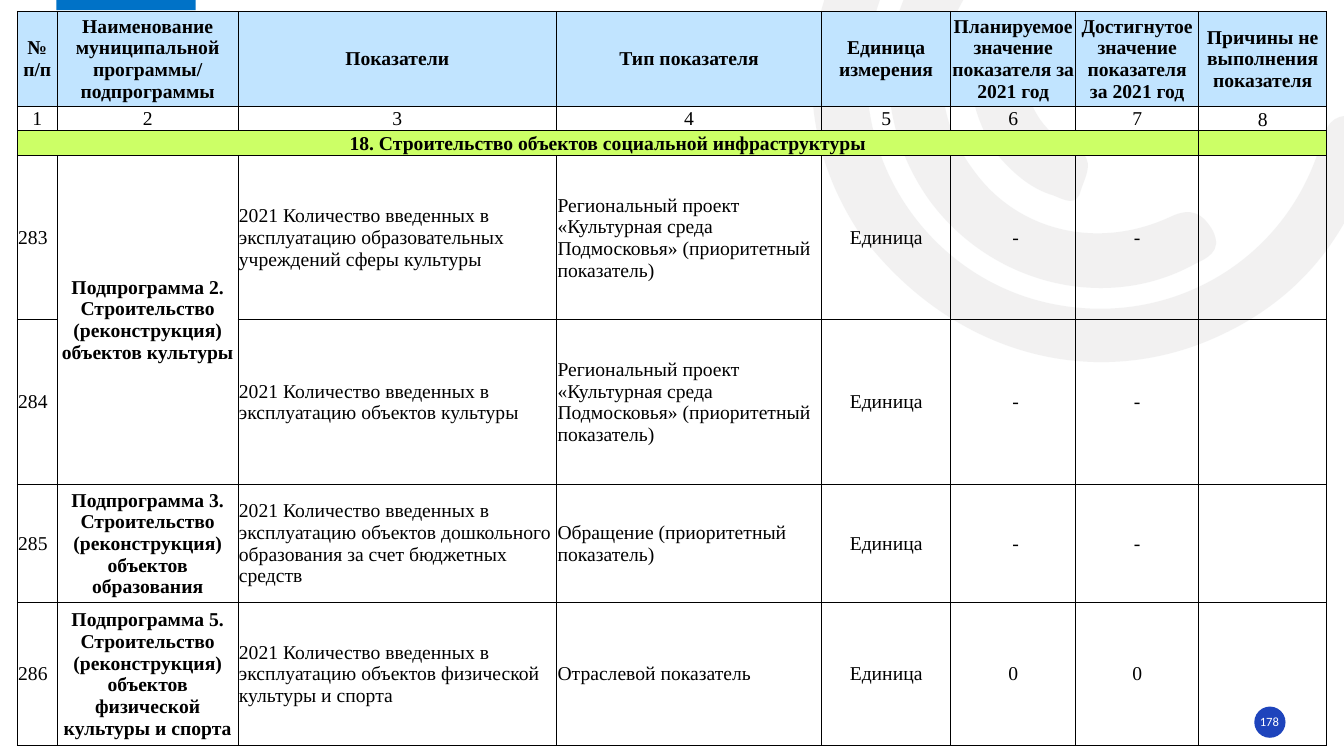
from dataclasses import dataclass
from typing import Any, Optional

from lxml.etree import SubElement
from pptx import Presentation
from pptx.dml.color import RGBColor
from pptx.enum.shapes import MSO_SHAPE
from pptx.enum.text import MSO_ANCHOR, PP_ALIGN
from pptx.oxml.ns import qn
from pptx.util import Inches, Pt

# The slide is a grid of one-inch modules; all lengths count modules.
MODULE = Inches(1)
GRID_COLUMNS, GRID_ROWS = 13.33, 7.5

COLORS = {
    "arc": "E7E6E6", "tab": "0072C7", "badge": "1E44BC", "header": "C1E4FF",
    "section": "CCFF66", "border": "000000", "ink": "000000", "paper": "FFFFFF",
}
ARC_OPACITY = 53
BODY_FONT = {"name": "Times New Roman", "size": Pt(14)}
NUMBER_FONT = {"name": "Calibri", "size": Pt(9)}
PLAIN_TABLE_STYLE = "{2D5ABB26-0587-4C30-8999-92F81FD0307C}"

Point = tuple[float, float]
Curve = tuple[float, float, float, float, float, float]


@dataclass(frozen=True)
class Arc:
    start: Point
    curves: tuple[Curve, ...]


@dataclass(frozen=True)
class Block:
    kind: MSO_SHAPE
    left: float
    top: float
    width: float
    height: float
    color: str


@dataclass(frozen=True)
class CellLook:
    fill: Optional[str] = None
    bold: bool = False
    align: PP_ALIGN = PP_ALIGN.CENTER
    anchor: MSO_ANCHOR = MSO_ANCHOR.MIDDLE


ARCS = (
    Arc((8.51, 2.29), (
        (7.99, 1.49, 7.87, 0.5, 8.38, -0.5), (8.9, -1.52, 9.76, -2.03, 10.9, -2.07),
        (11.05, -2.07, 11.21, -2.1, 11.31, -1.95), (11.44, -1.75, 11.27, -1.54, 10.98, -1.54),
        (9.67, -1.54, 8.65, -0.59, 8.6, 0.68), (8.56, 1.81, 9.36, 2.81, 10.46, 3.02),
        (11.6, 3.24, 12.7, 2.61, 13.07, 1.52), (13.09, 1.48, 13.11, 1.44, 13.12, 1.4),
        (13.16, 1.19, 13.27, 1.11, 13.49, 1.17), (13.73, 1.24, 13.67, 1.41, 13.61, 1.56),
        (13.34, 2.45, 12.78, 3.07, 11.91, 3.41), (10.7, 3.87, 9.36, 3.45, 8.51, 2.29))),
    Arc((9.22, 1.99), (
        (8.62, 1.15, 8.69, 0.07, 9.4, -0.68), (9.51, -0.79, 9.62, -0.95, 9.8, -0.78),
        (9.95, -0.64, 9.97, -0.5, 9.79, -0.32), (9.25, 0.26, 9.2, 1.08, 9.65, 1.68),
        (10.08, 2.29, 10.88, 2.49, 11.61, 2.15), (11.82, 2.05, 11.93, 2.12, 12.03, 2.29),
        (12.13, 2.5, 11.97, 2.56, 11.83, 2.63), (10.96, 3.1, 9.83, 2.82, 9.22, 1.99))),
    Arc((9.87, 1.51), (
        (9.75, 1.3, 9.64, 1.07, 9.64, 0.82), (9.64, 0.73, 9.61, 0.57, 9.76, 0.58),
        (9.92, 0.59, 10.13, 0.53, 10.16, 0.76), (10.21, 1.1, 10.36, 1.32, 10.67, 1.48),
        (10.88, 1.57, 10.76, 1.76, 10.72, 1.89), (10.68, 2.06, 10.55, 1.98, 10.45, 1.94),
        (10.21, 1.87, 10.03, 1.7, 9.87, 1.51))),
)
BLOCKS = (
    Block(MSO_SHAPE.RECTANGLE, 0.56, -0.02, 1.38, 0.12, "tab"),
    Block(MSO_SHAPE.OVAL, 12.44, 7.01, 0.31, 0.31, "badge"),
)

TABLE_LEFT, TABLE_TOP = 0.17, 0.11
COLUMN_WIDTHS = (0.4, 1.79, 3.16, 2.63, 1.28, 1.24, 1.22, 1.27)
ROW_HEIGHTS = (0.89, 0.23, 0.23, 1.63, 1.63, 1.02, 1.23)
HEADER_ROW, NUMBERING_ROW, SECTION_ROW = range(3)
PROGRAM_COLUMN, REASON_COLUMN = 1, 7
LEFT_COLUMNS = (0, 2, 3)
MERGES = (((2, 0), (2, 6)), ((3, 1), (4, 1)))

CULTURE_PROJECT = "Региональный проект «Культурная среда Подмосковья» (приоритетный показатель)"
UNIT = "Единица"
INDICATORS = (
    ("№ п/п", "Наименование муниципальной программы/ подпрограммы", "Показатели",
     "Тип показателя", "Единица измерения", "Планируемое значение показателя за 2021 год",
     "Достигнутое значение показателя за 2021 год", "Причины не выполнения показателя"),
    tuple(str(number) for number in range(1, 9)),
    ("18. Строительство объектов социальной инфраструктуры",),
    ("283", "Подпрограмма 2. Строительство (реконструкция) объектов культуры",
     "2021 Количество введенных в эксплуатацию образовательных учреждений сферы культуры",
     CULTURE_PROJECT, UNIT, " -", "-"),
    ("284", "", "2021 Количество введенных в эксплуатацию объектов культуры",
     CULTURE_PROJECT, UNIT, " -", "-"),
    ("285", "Подпрограмма 3. Строительство (реконструкция) объектов образования",
     "2021 Количество введенных в эксплуатацию объектов дошкольного образования "
     "за счет бюджетных средств",
     "Обращение (приоритетный показатель)", UNIT, " -", "-"),
    ("286", "Подпрограмма 5. Строительство (реконструкция) объектов физической культуры и спорта",
     "2021 Количество введенных в эксплуатацию объектов физической культуры и спорта",
     "Отраслевой показатель", UNIT, "0", "0"),
)


def span(modules: float) -> int:
    return round(modules * MODULE)


def rgb(color: str) -> RGBColor:
    return RGBColor.from_string(COLORS[color])


def apply_format(target: Any, values: dict[str, Any]) -> None:
    for attribute, value in values.items():
        setattr(target, attribute, value)


def paint(shape: Any, color: str) -> None:
    shape.fill.solid()
    shape.fill.fore_color.rgb = rgb(color)
    shape.line.fill.background()
    shape.shadow.inherit = False


def draw_arc(shapes: Any, arc: Arc) -> None:
    """Lay the control points as corners, then join each three into a Bézier curve."""
    builder = shapes.build_freeform(*map(span, arc.start))
    for curve in arc.curves:
        corners = [(span(x), span(y)) for x, y in zip(curve[::2], curve[1::2])]
        builder.add_line_segments(corners, close=False)
    builder.add_line_segments([], close=True)
    outline = builder.convert_to_shape()
    paint(outline, "arc")
    SubElement(next(outline.element.iter(qn("a:srgbClr"))), qn("a:alpha"),
               val=str(ARC_OPACITY * 1000))
    lines = list(outline.element.iter(qn("a:lnTo")))
    for first in range(0, len(lines), 3):
        bezier = lines[first].makeelement(qn("a:cubicBezTo"))
        lines[first].addprevious(bezier)
        for line in lines[first:first + 3]:
            bezier.append(line[0])
            line.getparent().remove(line)


def draw_block(shapes: Any, block: Block) -> None:
    lengths = map(span, (block.left, block.top, block.width, block.height))
    paint(shapes.add_shape(block.kind, *lengths), block.color)


def write(paragraph: Any, wording: str, font: dict[str, Any], color: str) -> None:
    run = paragraph.add_run()
    run.text = wording
    apply_format(run.font, font)
    run.font.color.rgb = rgb(color)


def draw_page_number(shapes: Any) -> None:
    frame = shapes.add_textbox(*map(span, (12.43, 7.06, 0.32, 0.2))).text_frame
    apply_format(frame, {"margin_left": 0, "margin_right": 0, "margin_top": 0,
                         "margin_bottom": 0, "word_wrap": True,
                         "vertical_anchor": MSO_ANCHOR.MIDDLE})
    frame.paragraphs[0].alignment = PP_ALIGN.CENTER
    write(frame.paragraphs[0], "178", NUMBER_FONT, "paper")


def look_of(row: int, column: int) -> CellLook:
    if row == HEADER_ROW:
        return CellLook("header", bold=True)
    if row == NUMBERING_ROW:
        return CellLook(anchor=MSO_ANCHOR.BOTTOM if column == REASON_COLUMN else MSO_ANCHOR.MIDDLE)
    if row == SECTION_ROW:
        return CellLook("section", bold=True)
    return CellLook(bold=column == PROGRAM_COLUMN,
                    align=PP_ALIGN.LEFT if column in LEFT_COLUMNS else PP_ALIGN.CENTER)


def fill_cell(cell: Any, wording: str, look: CellLook) -> None:
    apply_format(cell, {"margin_left": span(0.01), "margin_right": span(0.01),
                        "margin_top": span(0.01), "margin_bottom": 0,
                        "vertical_anchor": look.anchor})
    properties = cell._tc.get_or_add_tcPr()
    for side in ("a:lnL", "a:lnR", "a:lnT", "a:lnB"):
        border = SubElement(properties, qn(side), w=str(Pt(0.5)))
        SubElement(SubElement(border, qn("a:solidFill")), qn("a:srgbClr"), val=COLORS["border"])
    if look.fill:
        cell.fill.solid()
        cell.fill.fore_color.rgb = rgb(look.fill)
    else:
        cell.fill.background()
    paragraph = cell.text_frame.paragraphs[0]
    paragraph.alignment = look.align
    if wording:
        write(paragraph, wording, BODY_FONT | {"bold": look.bold}, "ink")
    ending = SubElement(paragraph._p, qn("a:endParaRPr"), sz=str(int(BODY_FONT["size"].pt * 100)))
    SubElement(ending, qn("a:latin"), typeface=BODY_FONT["name"])


def draw_indicators(shapes: Any) -> None:
    table = shapes.add_table(
        len(ROW_HEIGHTS), len(COLUMN_WIDTHS), span(TABLE_LEFT), span(TABLE_TOP),
        span(sum(COLUMN_WIDTHS)), span(sum(ROW_HEIGHTS))).table
    apply_format(table, {"first_row": False, "horz_banding": False})
    next(table._tbl.iter(qn("a:tableStyleId"))).text = PLAIN_TABLE_STYLE
    for column, width in zip(table.columns, COLUMN_WIDTHS):
        column.width = span(width)
    for r, (height, wordings) in enumerate(zip(ROW_HEIGHTS, INDICATORS)):
        table.rows[r].height = span(height)
        for c in range(len(COLUMN_WIDTHS)):
            fill_cell(table.cell(r, c), wordings[c] if c < len(wordings) else "", look_of(r, c))
    for first, last in MERGES:
        table.cell(*first).merge(table.cell(*last))


def main() -> None:
    deck = Presentation()
    apply_format(deck, {"slide_width": span(GRID_COLUMNS), "slide_height": span(GRID_ROWS)})
    for styles in (deck.element, deck.slide_master.element):
        for latin in styles.iter(qn("a:latin")):
            latin.set("typeface", BODY_FONT["name"])
    shapes = deck.slides.add_slide(deck.slide_layouts[6]).shapes
    for arc in ARCS:
        draw_arc(shapes, arc)
    for block in BLOCKS:
        draw_block(shapes, block)
    draw_page_number(shapes)
    draw_indicators(shapes)
    deck.save("out.pptx")


if __name__ == "__main__":
    main()
